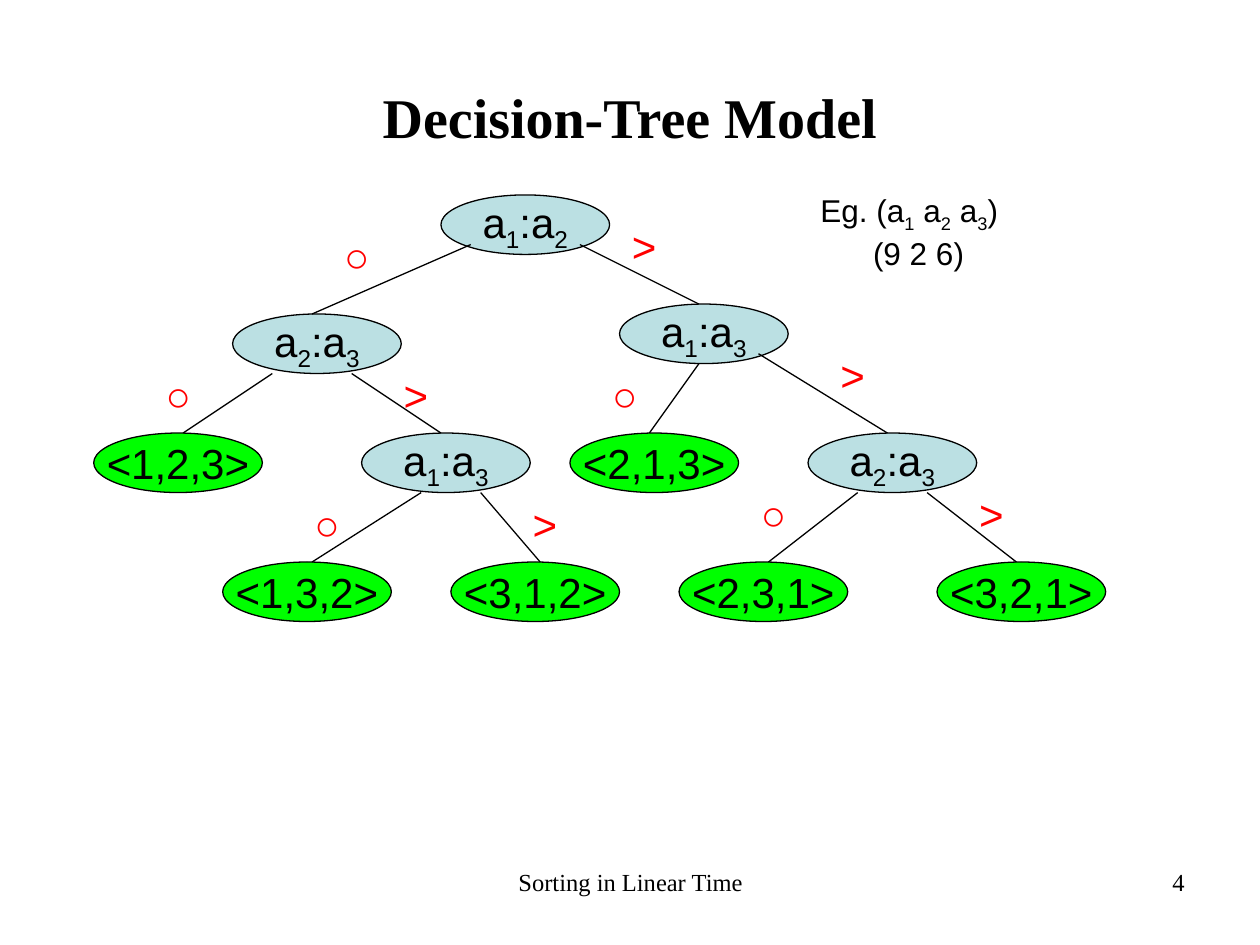
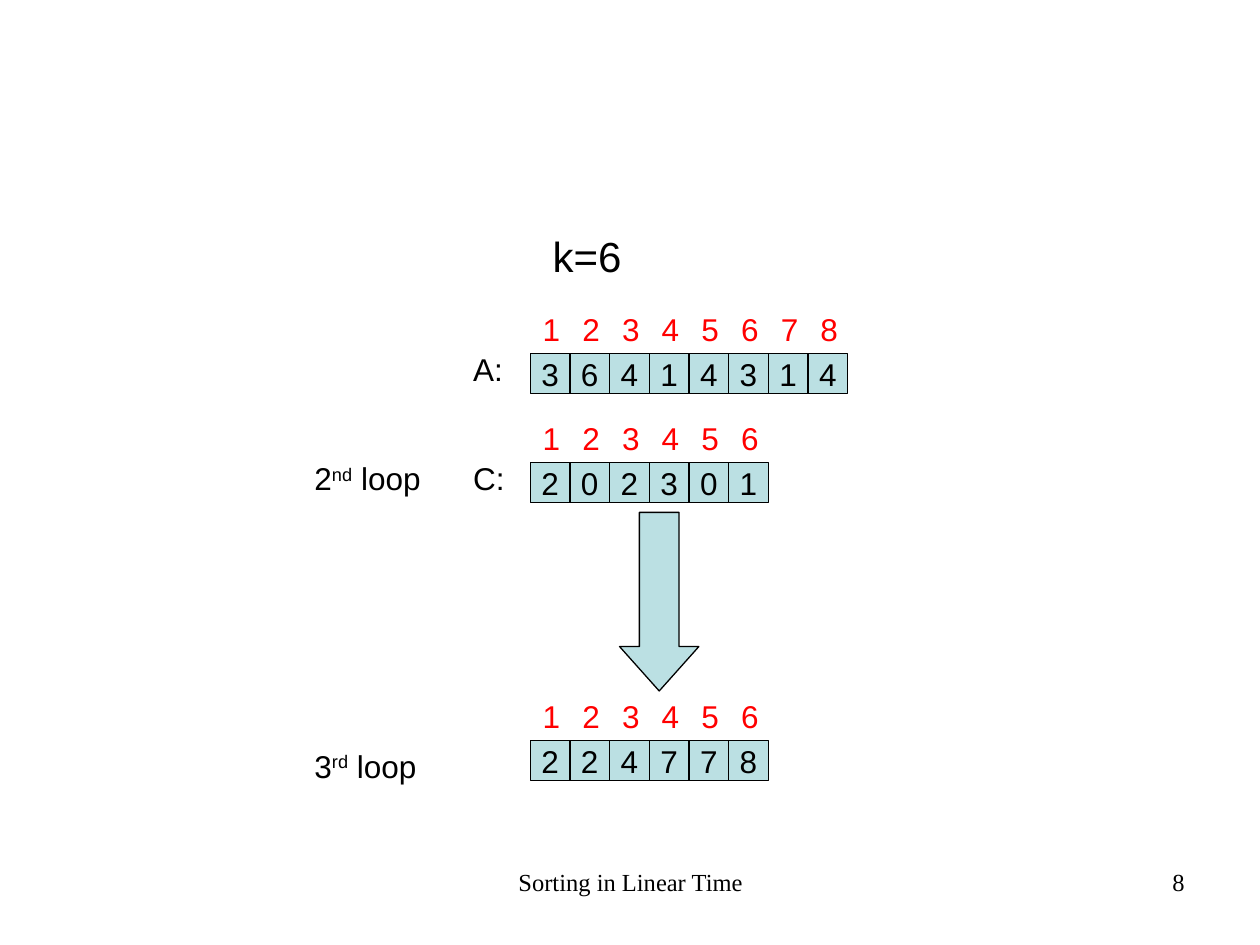
from lxml import etree
from pptx import Presentation
from pptx.dml.color import RGBColor
from pptx.enum.shapes import MSO_CONNECTOR, MSO_SHAPE
from pptx.enum.text import MSO_ANCHOR, PP_ALIGN
from pptx.oxml.ns import qn
from pptx.util import Cm, Pt

LEFT, CENTER, RIGHT = PP_ALIGN.LEFT, PP_ALIGN.CENTER, PP_ALIGN.RIGHT
MIDDLE, TOP = MSO_ANCHOR.MIDDLE, MSO_ANCHOR.TOP
ELLIPSE, RECT, DOWN_ARROW = MSO_SHAPE.OVAL, MSO_SHAPE.RECTANGLE, MSO_SHAPE.DOWN_ARROW
STRAIGHT = MSO_CONNECTOR.STRAIGHT

COLORS = {"ink": "000000", "mark": "FF0000", "node": "BBE0E3", "leaf": "00FF00"}
SANS, SERIF = "Arial", "Times New Roman"
TITLE_ONLY, BLANK = 5, 6
SUB, SUPER = -25000, 30000

NODE_W, NODE_H = 3.4, 1.2
CELL = 0.8
ARRAY_X = 10.69


def color(name):
    return RGBColor.from_string(COLORS[name])


def indexed(*parts):
    """Alternate normal and subscript runs."""
    return [(part, SUB if i % 2 else 0) for i, part in enumerate(parts)]


class Deck:
    def __init__(self):
        self.prs = Presentation()
        self.prs.slide_width, self.prs.slide_height = Cm(25.4), Cm(19.05)
        self.slide = None

    def new_slide(self, number, title=None):
        layout = self.prs.slide_layouts[TITLE_ONLY if title else BLANK]
        self.slide = self.prs.slides.add_slide(layout)
        if title:
            self.title(title)
        self.text(8.69, 17.35, 8.05, "Sorting in Linear Time", 14, font=SERIF, align=CENTER)
        self.text(18.21, 17.35, 5.92, number, 14, font=SERIF, align=RIGHT)

    def title(self, words):
        heading = self.slide.shapes.title
        heading.left, heading.top = Cm(1.27), Cm(0.76)
        heading.width, heading.height = Cm(22.86), Cm(3.18)
        heading.text_frame.vertical_anchor = MIDDLE
        self.add_runs(heading.text_frame.paragraphs[0], words, 32, font=SERIF,
                      bold=True, align=CENTER)

    def add_runs(self, paragraph, content, size, ink="ink", font=SANS, bold=False, align=LEFT):
        """Content is a string or a list of (text, baseline) runs."""
        paragraph.alignment = align
        runs = [(content, 0)] if isinstance(content, str) else content
        for words, baseline in runs:
            run = paragraph.add_run()
            run.text = words
            run.font.size, run.font.name, run.font.bold = Pt(size), font, bold
            run.font.color.rgb = color(ink)
            if baseline:
                run._r.get_or_add_rPr().set("baseline", str(baseline))

    def text(self, x, y, width, content, size, **style):
        height = size * 0.035 + 0.4
        frame = self.slide.shapes.add_textbox(Cm(x), Cm(y), Cm(width), Cm(height)).text_frame
        frame.word_wrap = True
        frame.vertical_anchor = TOP
        self.add_runs(frame.paragraphs[0], content, size, **style)
        return frame

    def shape(self, kind, x, y, width, height, content="", size=18, fill="node"):
        shape = self.slide.shapes.add_shape(kind, Cm(x), Cm(y), Cm(width), Cm(height))
        shape.shadow.inherit = False
        shape.fill.solid()
        shape.fill.fore_color.rgb = color(fill)
        shape.line.color.rgb = color("ink")
        shape.line.width = Pt(0.75)
        if content:
            shape.text_frame.word_wrap = False
            shape.text_frame.vertical_anchor = MIDDLE
            self.add_runs(shape.text_frame.paragraphs[0], content, size, align=CENTER)
        return shape

    def line(self, x1, y1, x2, y2):
        line = self.slide.shapes.add_connector(STRAIGHT, Cm(x1), Cm(y1), Cm(x2), Cm(y2))
        line.line.color.rgb = color("ink")
        line.line.width = Pt(0.75)
        etree.SubElement(line._element.spPr, qn("a:effectLst"))

    def array(self, y, values):
        """Row of cells with red positions above them."""
        for i, value in enumerate(values):
            x = ARRAY_X + i * CELL
            self.shape(RECT, x, y, CELL, CELL, value)
            self.text(x, y - 1, CELL, str(i + 1), 18, ink="mark")


def decision_tree(deck):
    deck.new_slide("4", "Decision-Tree Model")

    # Comparisons and resulting orders: left, top, content
    comparisons = {
        "root": (8.89, 3.93, "12"), "low": (4.69, 6.33, "23"),
        "high": (12.49, 6.13, "13"), "low_high": (7.29, 8.73, "13"),
        "high_high": (16.29, 8.73, "23"),
    }
    orders = {
        "123": (1.89, 8.73), "213": (11.49, 8.73), "132": (4.49, 11.33),
        "312": (9.09, 11.33), "231": (13.69, 11.33), "321": (18.89, 11.33),
    }
    for x, y, (first, second) in comparisons.values():
        deck.shape(ELLIPSE, x, y, NODE_W, NODE_H, indexed("a", first, ":a", second), 24)
    for order, (x, y) in orders.items():
        deck.shape(ELLIPSE, x, y, NODE_W, NODE_H, f"<{','.join(order)}>", 24, "leaf")

    # Branches: parent, offset in it, child, offset along its top, mark and its place
    branches = [
        ("root", 0.6, 1.0, "low", 1.6, "○", 6.69, 4.53),
        ("root", 2.8, 1.0, "high", 1.6, ">", 12.49, 4.33),
        ("low", 0.8, 1.2, "123", 1.8, "○", 3.09, 7.33),
        ("low", 2.4, 1.2, "low_high", 1.6, ">", 7.89, 7.33),
        ("high", 1.6, 1.2, "213", 1.6, "○", 12.09, 7.33),
        ("high", 2.8, 1.0, "high_high", 1.6, ">", 16.69, 6.93),
        ("low_high", 1.2, 1.2, "132", 1.8, "○", 6.09, 9.93),
        ("low_high", 2.4, 1.2, "312", 1.8, ">", 10.49, 9.93),
        ("high_high", 1.0, 1.2, "231", 1.8, "○", 15.09, 9.73),
        ("high_high", 2.4, 1.2, "321", 1.6, ">", 19.49, 9.73),
    ]
    places = {**comparisons, **orders}
    for parent, dx, dy, child, child_dx, mark, mark_x, mark_y in branches:
        x1, y1 = places[parent][:2]
        x2, y2 = places[child][:2]
        deck.line(x1 + dx, y1 + dy, x2 + child_dx, y2)
        deck.text(mark_x, mark_y, 2.4, mark, 24, ink="mark", bold=mark == "○")

    # Example input
    example = deck.text(16.29, 3.73, 7.6,
                        indexed("Eg. (a", "1", " a", "2", " a", "3", ")"), 18)
    numbers = example.add_paragraph()
    deck.add_runs(numbers, "(9 2 6)", 18)
    numbers._p.get_or_add_pPr().set("marL", str(Cm(1.06)))


def counting_loops(deck):
    deck.new_slide("8")
    deck.text(10.89, 4.53, 10.2, "k=6", 24)

    # Input array, counts and running totals
    for y, values in ((7.13, "36414314"), (9.33, "202301"), (14.93, "224778")):
        deck.array(y, values)
    for y, name in ((6.93, "A:"), (9.13, "C:")):
        deck.text(9.29, y, 1.2, name, 18)
    for y, number, ending in ((9.13, "2", "nd"), (14.93, "3", "rd")):
        deck.text(6.09, y, 3.6, [(number, 0), (ending, SUPER), (" loop", 0)], 18)

    # Step from counts to totals
    step = deck.shape(DOWN_ARROW, 12.49, 10.33, 1.6, 3.6)
    step.adjustments[0], step.adjustments[1] = 0.5, 0.56


def main():
    deck = Deck()
    decision_tree(deck)
    counting_loops(deck)
    deck.prs.save("out.pptx")


if __name__ == "__main__":
    main()
